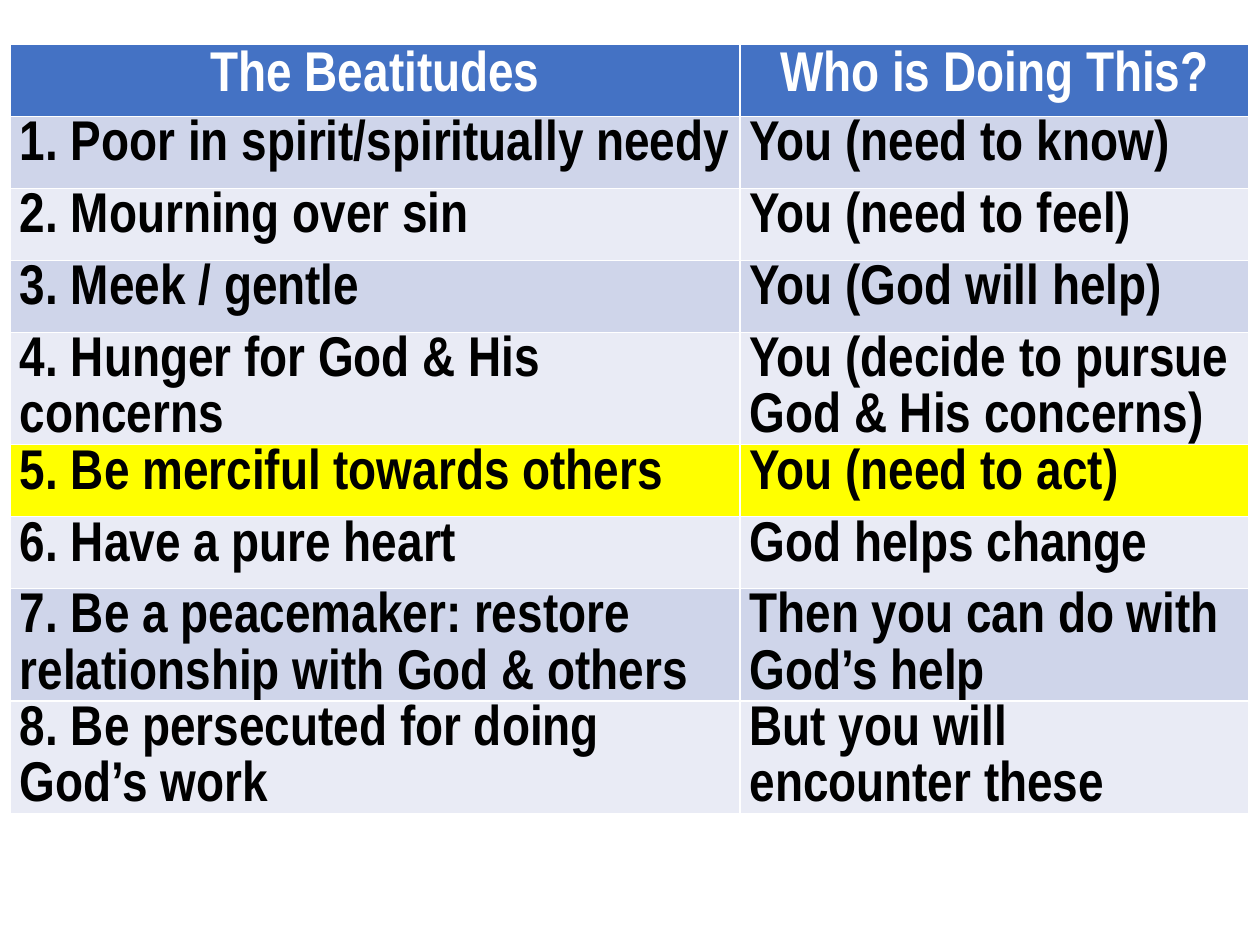
"""Build a slide with a table of the Beatitudes and who acts in each."""
from dataclasses import dataclass
from typing import NamedTuple

from pptx import Presentation
from pptx.dml.color import RGBColor
from pptx.enum.text import PP_ALIGN
from pptx.table import _Cell
from pptx.util import Cm, Pt

CENTER, LEFT = PP_ALIGN.CENTER, PP_ALIGN.LEFT


@dataclass(frozen=True)
class Theme:
    font: str = "Arial Narrow"
    size: Pt = Pt(32)
    header: RGBColor = RGBColor(0x44, 0x72, 0xC4)
    bands: tuple[RGBColor, RGBColor] = (
        RGBColor(0xCF, 0xD5, 0xEA),
        RGBColor(0xE9, 0xEB, 0xF5),
    )
    highlight: RGBColor = RGBColor(0xFF, 0xFF, 0x00)
    light: RGBColor = RGBColor(0xFF, 0xFF, 0xFF)
    dark: RGBColor = RGBColor(0x00, 0x00, 0x00)


class Beatitude(NamedTuple):
    name: str
    doer: str
    highlighted: bool = False


THEME = Theme()
HEADINGS = ("The Beatitudes", "Who is Doing This?")
BEATITUDES = (
    Beatitude("1. Poor in spirit/spiritually needy", "You (need to know)"),
    Beatitude("2. Mourning over sin", "You (need to feel)"),
    Beatitude("3. Meek / gentle", "You (God will help)"),
    Beatitude("4. Hunger for God & His concerns",
              "You (decide to pursue God & His concerns)"),
    Beatitude("5. Be merciful towards others", "You (need to act)", True),
    Beatitude("6. Have a pure heart", "God helps change"),
    Beatitude("7. Be a peacemaker: restore relationship with God & others",
              "Then you can do with God’s help"),
    Beatitude("8. Be persecuted for doing God’s work",
              "But you will encounter these"),
)
COLUMN_WIDTHS = (Cm(14.71), Cm(10.26))
ROW_HEIGHT = Cm(1.45)


def write_cell(cell: _Cell, text: str, fill: RGBColor, color: RGBColor,
               align: PP_ALIGN) -> None:
    """Fill a cell and write its text as one bold run."""
    cell.fill.solid()
    cell.fill.fore_color.rgb = fill
    p = cell.text_frame.paragraphs[0]
    p.alignment = align
    r = p.add_run()
    r.text = text
    r.font.name = THEME.font
    r.font.size = THEME.size
    r.font.bold = True
    r.font.color.rgb = color


def write_body_cell(cell: _Cell, text: str, fill: RGBColor) -> None:
    """Write a body cell with tight margins."""
    write_cell(cell, text, fill, THEME.dark, LEFT)
    cell.margin_left = cell.margin_right = Cm(0.19)
    cell.margin_top = cell.margin_bottom = Cm(0)
    cell.text_frame.paragraphs[0].line_spacing = 1.07


def main() -> None:
    """Create the presentation and save it."""
    prs = Presentation()
    prs.slide_width, prs.slide_height = Cm(25.4), Cm(19.05)
    s = prs.slides.add_slide(prs.slide_layouts[6])
    row_count = len(BEATITUDES) + 1
    table = s.shapes.add_table(
        row_count, len(HEADINGS), Cm(0.21), Cm(0.9),
        sum(COLUMN_WIDTHS), ROW_HEIGHT * row_count).table
    for column, width in zip(table.columns, COLUMN_WIDTHS):
        column.width = width
    for i, heading in enumerate(HEADINGS):
        write_cell(table.cell(0, i), heading, THEME.header, THEME.light, CENTER)
    for i, item in enumerate(BEATITUDES):
        fill = THEME.highlight if item.highlighted else THEME.bands[i % 2]
        write_body_cell(table.cell(i + 1, 0), item.name, fill)
        write_body_cell(table.cell(i + 1, 1), item.doer, fill)
    prs.save("out.pptx")


if __name__ == "__main__":
    main()
